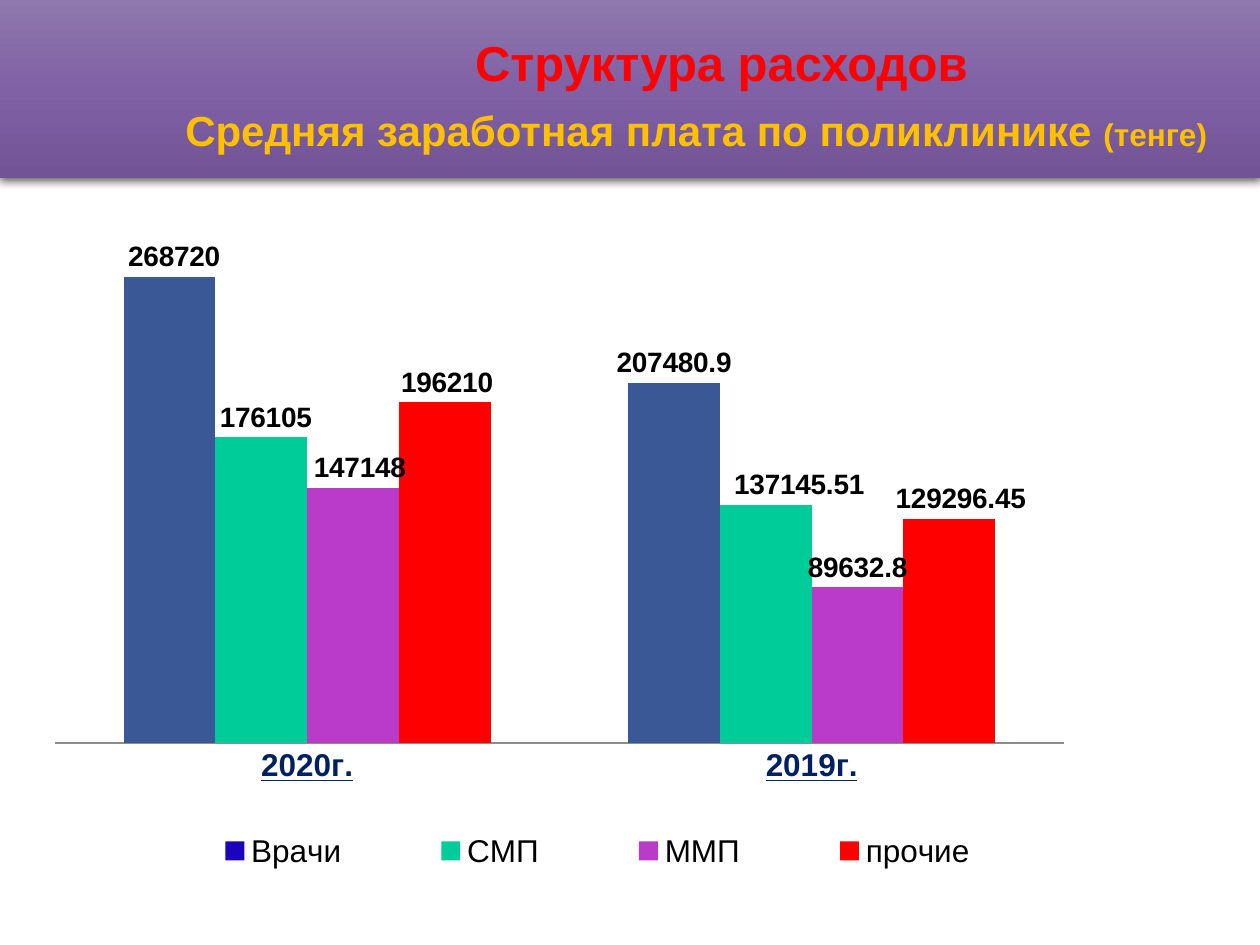
from lxml import etree
from pptx import Presentation, oxml, util as u
from pptx.chart.data import CategoryChartData
from pptx.dml.color import RGBColor
from pptx.enum import chart as ch, shapes, text
from pptx.oxml.ns import qn

WIDTH, HEIGHT = u.Inches(10), u.Inches(7.5)
A_NS = "http://schemas.openxmlformats.org/drawingml/2006/main"
YEARS = ["2020г.", "2019г."]
STAFF = [
    ("Врачи", "1A04BC", [268720, 207480.9], [0.004, 0]),
    ("СМП", "00CC99", [176105, 137145.51], [0.004, 0.029]),
    ("ММП", "BB3BC9", [147148, 89632.8], [0.006, 0]),
    ("прочие", "FF0000", [196210, 129296.45], [0.002, 0.01]),
]
DOCTOR_BARS = "3A5896"


def color(hex_string):
    return RGBColor.from_string(hex_string)


def share(left, top, width, height):
    return (int(WIDTH * left), int(HEIGHT * top),
            int(WIDTH * width), int(HEIGHT * height))


def style(font, size, hex_string, bold=False, name="Arial"):
    font.name, font.size, font.bold = name, u.Pt(size), bold
    font.color.rgb = color(hex_string)


def paint(part, hex_string):
    part.format.fill.solid()
    part.format.fill.fore_color.rgb = color(hex_string)


def add_band(slide, box):
    band = slide.shapes.add_shape(shapes.MSO_SHAPE.RECTANGLE, *box)
    band.line.fill.background()
    band.fill.gradient()
    band.fill.gradient_angle = 270
    stops = band._element.spPr.find(qn("a:gradFill")).find(qn("a:gsLst"))
    for stop in list(stops):
        stops.remove(stop)
    for position, shade in [(0, "8E78AC"), (50, "8061A5"), (100, "715396")]:
        stop = etree.SubElement(stops, qn("a:gs"), pos=str(position * 1000))
        etree.SubElement(stop, qn("a:srgbClr"), val=shade)
    band._element.spPr.append(oxml.parse_xml(
        f'<a:effectLst xmlns:a="{A_NS}"><a:outerShdw blurRad="57150" dist="19050" '
        'dir="5400000" algn="ctr" rotWithShape="0"><a:srgbClr val="000000">'
        '<a:alpha val="63000"/></a:srgbClr></a:outerShdw></a:effectLst>'))
    slide.shapes._spTree.insert(2, band._element)


def add_heading(holder, box, parts):
    holder.left, holder.top, holder.width, holder.height = box
    frame = holder.text_frame
    frame.word_wrap = True
    frame.auto_size = text.MSO_AUTO_SIZE.NONE
    frame.vertical_anchor = text.MSO_ANCHOR.MIDDLE
    frame.margin_left = frame.margin_right = 0
    frame.margin_top = frame.margin_bottom = 0
    heading = frame.paragraphs[0]
    heading.alignment = text.PP_ALIGN.CENTER
    for words, size, shade in parts:
        run = heading.add_run()
        run.text = words
        style(run.font, size, shade, bold=True)


def add_layout(parent, index, **values):
    for old in parent.findall(qn("c:layout")):
        parent.remove(old)
    layout = etree.Element(qn("c:layout"))
    manual = etree.SubElement(layout, qn("c:manualLayout"))
    for tag, value in values.items():
        etree.SubElement(manual, qn("c:" + tag), val=str(value))
    parent.insert(index, layout)


def add_salary_chart(slide, box):
    salaries = CategoryChartData()
    salaries.categories = YEARS
    for name, _, values, _ in STAFF:
        salaries.add_series(name, values)
    chart = slide.shapes.add_chart(
        ch.XL_CHART_TYPE.COLUMN_CLUSTERED, *box, salaries).chart
    chart.has_title = False
    style(chart.font, 18, "000000", name="Calibri")

    years = chart.category_axis
    years.major_tick_mark = ch.XL_TICK_MARK.NONE
    years.format.line.color.rgb = color("8C8C8C")
    style(years.tick_labels.font, 18, "002060", bold=True)
    years.tick_labels.font.underline = True
    tenge = chart.value_axis
    tenge.minimum_scale, tenge.maximum_scale = 0, 300000
    tenge.has_major_gridlines = False
    tenge.visible = False

    plot = chart.plots[0]
    plot.gap_width, plot.overlap = 150, 0
    plot.vary_by_categories = False
    for series, (_, shade, _, shifts) in zip(plot.series, STAFF):
        paint(series, shade)
        labels = series.data_labels
        labels.show_value = True
        labels.position = ch.XL_LABEL_POSITION.OUTSIDE_END
        style(labels.font, 16, "000000", bold=True)
        for index, shift in enumerate(shifts):
            if shift:
                label = series.points[index].data_label
                style(label.font, 16, "000000", bold=True)
                label.position = ch.XL_LABEL_POSITION.OUTSIDE_END
                entry = labels._element.findall(qn("c:dLbl"))[-1]
                add_layout(entry, 1, x=shift, y=0)
    for index in range(len(YEARS)):
        paint(plot.series[0].points[index], DOCTOR_BARS)

    chart.has_legend = True
    legend = chart.legend
    legend.position = ch.XL_LEGEND_POSITION.BOTTOM
    legend.include_in_layout = False
    style(legend.font, 18, "000000")
    add_layout(legend._element, 1, xMode="edge", yMode="edge",
               x=0.07, y=0.85, w=0.8, h=0.1)
    add_layout(chart._chartSpace.chart.plotArea, 0, layoutTarget="inner",
               xMode="edge", yMode="edge", x=0, y=0.007, w=0.874, h=0.74)


def build():
    deck = Presentation()
    deck.slide_width, deck.slide_height = WIDTH, HEIGHT
    slide = deck.slides.add_slide(deck.slide_layouts[5])
    add_band(slide, share(0, 0, 1, 0.188))
    add_heading(slide.shapes.title, share(0.15, 0.035, 0.845, 0.06),
                [("Структура расходов", 28, "FF0000")])
    subtitle_box = share(0.12, 0.107, 0.865, 0.06)
    add_heading(slide.shapes.add_textbox(*subtitle_box), subtitle_box,
                [("Средняя заработная плата по поликлинике ", 24, "FFC000"),
                 ("(тенге)", 18, "FFC000")])
    add_salary_chart(slide, share(0.043, 0.23, 0.917, 0.745))
    deck.save("out.pptx")


if __name__ == "__main__":
    build()
